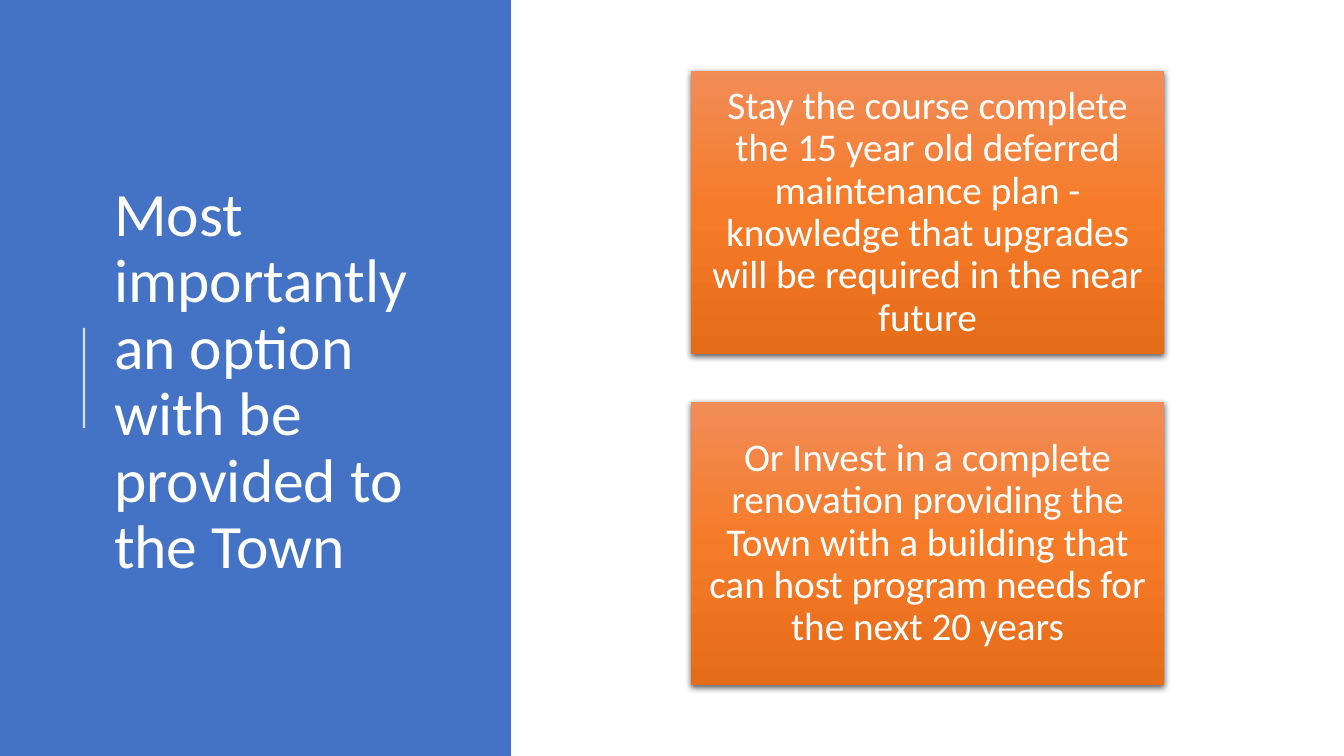
from copy import deepcopy

from lxml import etree
from pptx import Presentation
from pptx.dml.color import RGBColor
from pptx.enum.shapes import MSO_CONNECTOR, MSO_SHAPE
from pptx.enum.text import MSO_ANCHOR, MSO_AUTO_SIZE, PP_ALIGN
from pptx.oxml.ns import qn
from pptx.util import Emu, Pt

RECTANGLE = MSO_SHAPE.RECTANGLE
STRAIGHT = MSO_CONNECTOR.STRAIGHT
MIDDLE = MSO_ANCHOR.MIDDLE
NO_AUTOFIT = MSO_AUTO_SIZE.NONE
LEFT, CENTER = PP_ALIGN.LEFT, PP_ALIGN.CENTER

WHITE = RGBColor(0xFF, 0xFF, 0xFF)
BLUE = RGBColor(0x44, 0x72, 0xC4)
CARD_GRADIENT = (
    (0, RGBColor(0xF1, 0x8C, 0x57)),
    (0.5, RGBColor(0xF6, 0x7B, 0x28)),
    (1, RGBColor(0xE5, 0x6C, 0x19)),
)
FONT = "Calibri"

SLIDE_WIDTH, SLIDE_HEIGHT = 1344, 756
PANEL_WIDTH = 511
CARD_LEFT, CARD_TOP, CARD_WIDTH, CARD_HEIGHT = 691, 71, 473, 283
CARD_STEP = 331
CARD_INSET = 12

TITLE = "Most importantly an option with be provided to the Town"
OPTIONS = (
    "Stay the course complete the 15 year old deferred maintenance plan - "
    "knowledge that upgrades will be required in the near future",
    "Or Invest in a complete renovation providing the Town with a building "
    "that can host program needs for the next 20 years",
)


def px(length):
    return Emu(round(length * 914400 / 100.8))


def write_text(shape, text, size, alignment):
    frame = shape.text_frame
    frame.text = text
    frame.word_wrap = True
    frame.auto_size = NO_AUTOFIT
    frame.vertical_anchor = MIDDLE
    paragraph = frame.paragraphs[0]
    paragraph.alignment = alignment
    paragraph.line_spacing = 0.9
    font = paragraph.runs[0].font
    font.name = FONT
    font.size = Pt(size)
    font.color.rgb = WHITE


def add_rectangle(slide, left, top, width, height):
    rectangle = slide.shapes.add_shape(
        RECTANGLE, px(left), px(top), px(width), px(height))
    rectangle.shadow.inherit = False
    rectangle.line.fill.background()
    return rectangle


def add_accent_line(slide, x, top, bottom):
    accent = slide.shapes.add_connector(STRAIGHT, px(x), px(bottom), px(x), px(top))
    accent.line.color.rgb = WHITE
    accent.line.width = Pt(1.5)
    properties = accent.element.spPr
    color = properties.find(".//" + qn("a:srgbClr"))
    etree.SubElement(color, qn("a:alpha"), val="80000")
    etree.SubElement(properties, qn("a:effectLst"))


def fill_gradient(shape, stops):
    shape.fill.gradient()
    shape.fill.gradient_angle = 270
    stop_list = shape.element.spPr.find(".//" + qn("a:gsLst"))
    while len(stop_list) < len(stops):
        stop_list.append(deepcopy(stop_list[0]))
    for stop, (position, color) in zip(shape.fill.gradient_stops, stops):
        stop.position = position
        stop.color.rgb = color


def add_drop_shadow(shape):
    effects = shape.element.spPr.find(qn("a:effectLst"))
    shadow = etree.SubElement(
        effects, qn("a:outerShdw"), blurRad=str(Pt(4.5)), dist=str(Pt(1.5)),
        dir="5400000", algn="ctr", rotWithShape="0")
    color = etree.SubElement(shadow, qn("a:srgbClr"), val="000000")
    etree.SubElement(color, qn("a:alpha"), val="63000")


def add_option_card(slide, top, text):
    card = add_rectangle(slide, CARD_LEFT, top, CARD_WIDTH, CARD_HEIGHT)
    fill_gradient(card, CARD_GRADIENT)
    add_drop_shadow(card)
    frame = card.text_frame
    frame.margin_left = frame.margin_right = px(CARD_INSET)
    frame.margin_top = frame.margin_bottom = px(CARD_INSET)
    write_text(card, text, 28, CENTER)


def place_title(slide):
    title = slide.shapes.title
    title.left, title.top = px(104), px(79)
    title.width, title.height = px(372), px(607)
    write_text(title, TITLE, 44, LEFT)
    # Bring the title in front of the panel
    title.element.getparent().append(title.element)


def main():
    presentation = Presentation()
    presentation.slide_width = px(SLIDE_WIDTH)
    presentation.slide_height = px(SLIDE_HEIGHT)
    slide = presentation.slides.add_slide(presentation.slide_layouts[5])

    # Title panel
    panel = add_rectangle(slide, 0, 0, PANEL_WIDTH, SLIDE_HEIGHT)
    panel.fill.solid()
    panel.fill.fore_color.rgb = BLUE
    add_accent_line(slide, 84, 328, 428)
    place_title(slide)

    # Option cards
    for index, option in enumerate(OPTIONS):
        add_option_card(slide, CARD_TOP + index * CARD_STEP, option)

    presentation.save("out.pptx")


if __name__ == "__main__":
    main()
